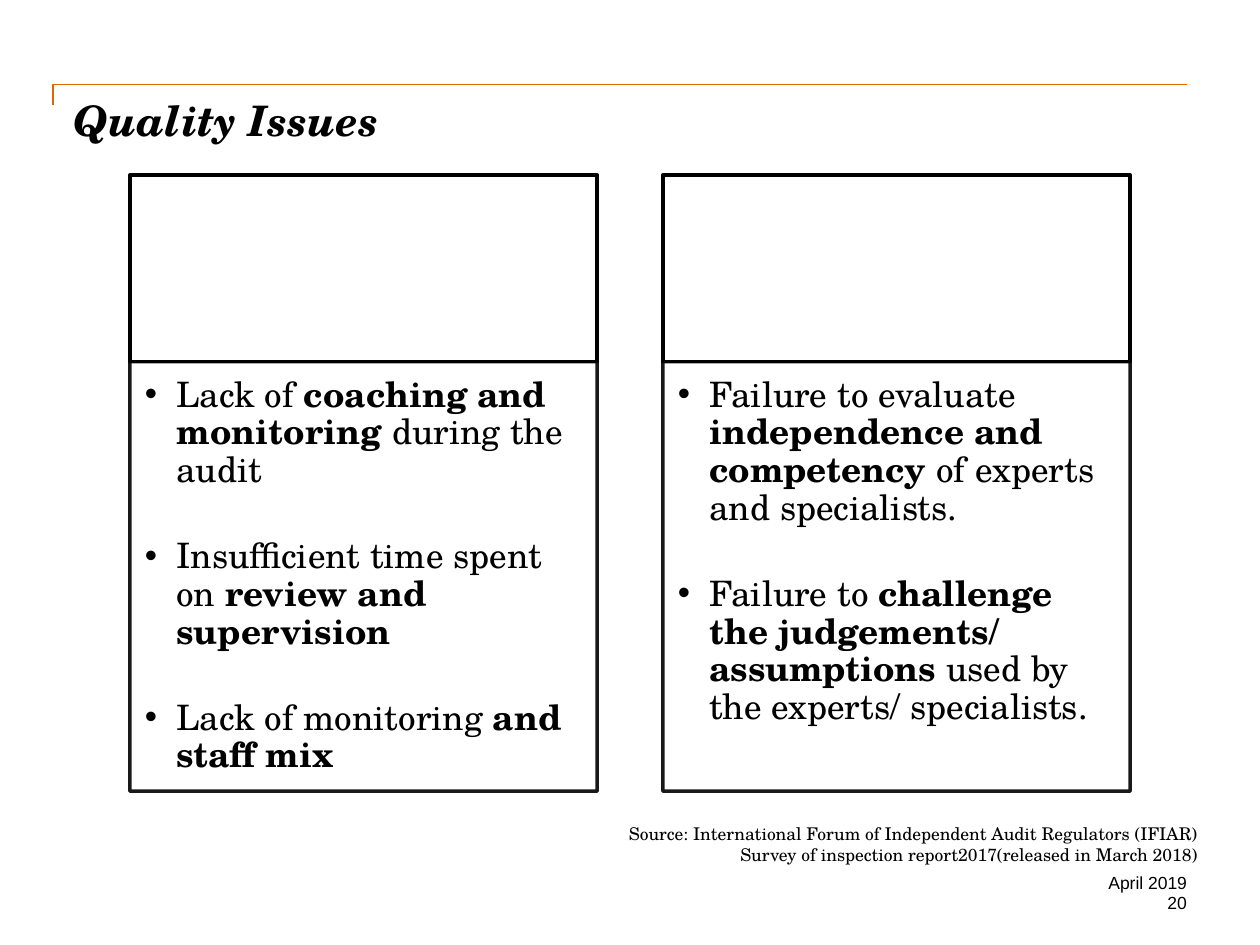
import pptx
import pptx.dml.color
import pptx.enum.shapes
import pptx.enum.text
import pptx.oxml.ns
import pptx.util
from lxml import etree
from pptx.util import Inches

SERIF = "TeX Gyre Schola"
BLACK, WHITE, ORANGE = "000000", "FFFFFF", "DC6900"
ALIGN = pptx.enum.text.PP_ALIGN

TITLE = "Quality Issues"
COLUMNS = [
    [
        [("Lack of ", False), ("coaching and monitoring ", True), ("during the audit", False)],
        [("Insufficient time spent on ", False), ("review and supervision", True)],
        [("Lack of monitoring ", False), ("and staff mix", True)],
    ],
    [
        [("Failure to evaluate ", False), ("independence and competency ", True),
         ("of experts and specialists.", False)],
        [("Failure to ", False), ("challenge the judgements/ assumptions", True),
         (" used by the experts/ specialists.", False)],
    ],
]
SOURCE = [
    "Source: International Forum of Independent Audit Regulators (IFIAR)",
    "Survey of inspection report2017(released in March 2018)",
]
FOOTERS = [
    (SOURCE, (3.92, 6.53, 5.58, 0.42), SERIF),
    (["April 2019"], (7.75, 6.92, 1.67, 0.17), "Arial"),
    (["20"], (7.75, 7.08, 1.67, 0.17), "Arial"),
]
COLUMN_LEFT, COLUMN_STEP, COLUMN_WIDTH = 1.03, 4.23, 3.71
HEADER_TOP, HEADER_HEIGHT, BODY_HEIGHT = 1.39, 1.48, 3.41


def color(value):
    return pptx.dml.color.RGBColor.from_string(value)


def place(shape, left, top, width, height):
    shape.left, shape.top = Inches(left), Inches(top)
    shape.width, shape.height = Inches(width), Inches(height)


def outline(shape, opacity=100):
    shape.fill.solid()
    shape.fill.fore_color.rgb = color(WHITE)
    shape.line.color.rgb = color(BLACK)
    shape.line.width = pptx.util.Pt(2)
    if opacity < 100:
        for element in shape._element.spPr.iter(pptx.oxml.ns.qn("a:srgbClr")):
            alpha = etree.SubElement(element, pptx.oxml.ns.qn("a:alpha"))
            alpha.set("val", str(opacity * 1000))


def write(shape, paragraphs, size=10, font=SERIF, align=ALIGN.LEFT, italic=False,
          insets=(0, 0, 0, 0), spacing=1.0, after=0, indent=0):
    frame = shape.text_frame
    frame.word_wrap = True
    frame.auto_size = pptx.enum.text.MSO_AUTO_SIZE.NONE
    frame.vertical_anchor = pptx.enum.text.MSO_ANCHOR.TOP
    (frame.margin_left, frame.margin_top,
     frame.margin_right, frame.margin_bottom) = map(Inches, insets)
    for index, runs in enumerate(paragraphs):
        paragraph = frame.add_paragraph() if index else frame.paragraphs[0]
        paragraph.alignment = align
        paragraph.line_spacing = spacing
        paragraph.space_before = pptx.util.Pt(0)
        paragraph.space_after = pptx.util.Pt(after)
        if indent:
            properties = paragraph._p.get_or_add_pPr()
            properties.set("marL", str(Inches(indent)))
            properties.set("indent", str(-Inches(indent)))
        for text, bold in runs:
            run = paragraph.add_run()
            run.text = text
            run.font.name, run.font.size = font, pptx.util.Pt(size)
            run.font.bold, run.font.italic = bold, italic
            run.font.color.rgb = color(BLACK)


def main():
    """Build the quality issues slide and save it."""
    presentation = pptx.Presentation()
    presentation.slide_width, presentation.slide_height = Inches(10), Inches(7.5)
    slide = presentation.slides.add_slide(presentation.slide_layouts[3])
    title, *bodies = slide.placeholders

    builder = slide.shapes.build_freeform(Inches(0.42), Inches(0.83))
    builder.add_line_segments(
        [(Inches(0.42), Inches(0.67)), (Inches(9.42), Inches(0.67))], close=False)
    rule = builder.convert_to_shape()
    rule.shadow.inherit = False
    rule.fill.background()
    rule.line.color.rgb = color(ORANGE)
    rule.line.width = pptx.util.Pt(1)

    place(title, 0.58, 0.75, 8.83, 1)
    write(title, [[(TITLE, True)]], size=24, italic=True)

    for index, (body, bullets) in enumerate(zip(bodies, COLUMNS)):
        left = COLUMN_LEFT + index * COLUMN_STEP
        header = slide.shapes.add_shape(
            pptx.enum.shapes.MSO_SHAPE.RECTANGLE, Inches(left), Inches(HEADER_TOP),
            Inches(COLUMN_WIDTH), Inches(HEADER_HEIGHT))
        header.shadow.inherit = False
        outline(header)
        place(body, left, HEADER_TOP + HEADER_HEIGHT, COLUMN_WIDTH, BODY_HEIGHT)
        outline(body, opacity=90)
        write(body, bullets, size=20, insets=(0.12, 0.12, 0.16, 0.17),
              spacing=0.9, after=27.5, indent=0.25)

    for lines, box, font in FOOTERS:
        footer = slide.shapes.add_textbox(*map(Inches, box))
        write(footer, [[(line, False)] for line in lines], font=font, align=ALIGN.RIGHT)

    presentation.save("out.pptx")


if __name__ == "__main__":
    main()
